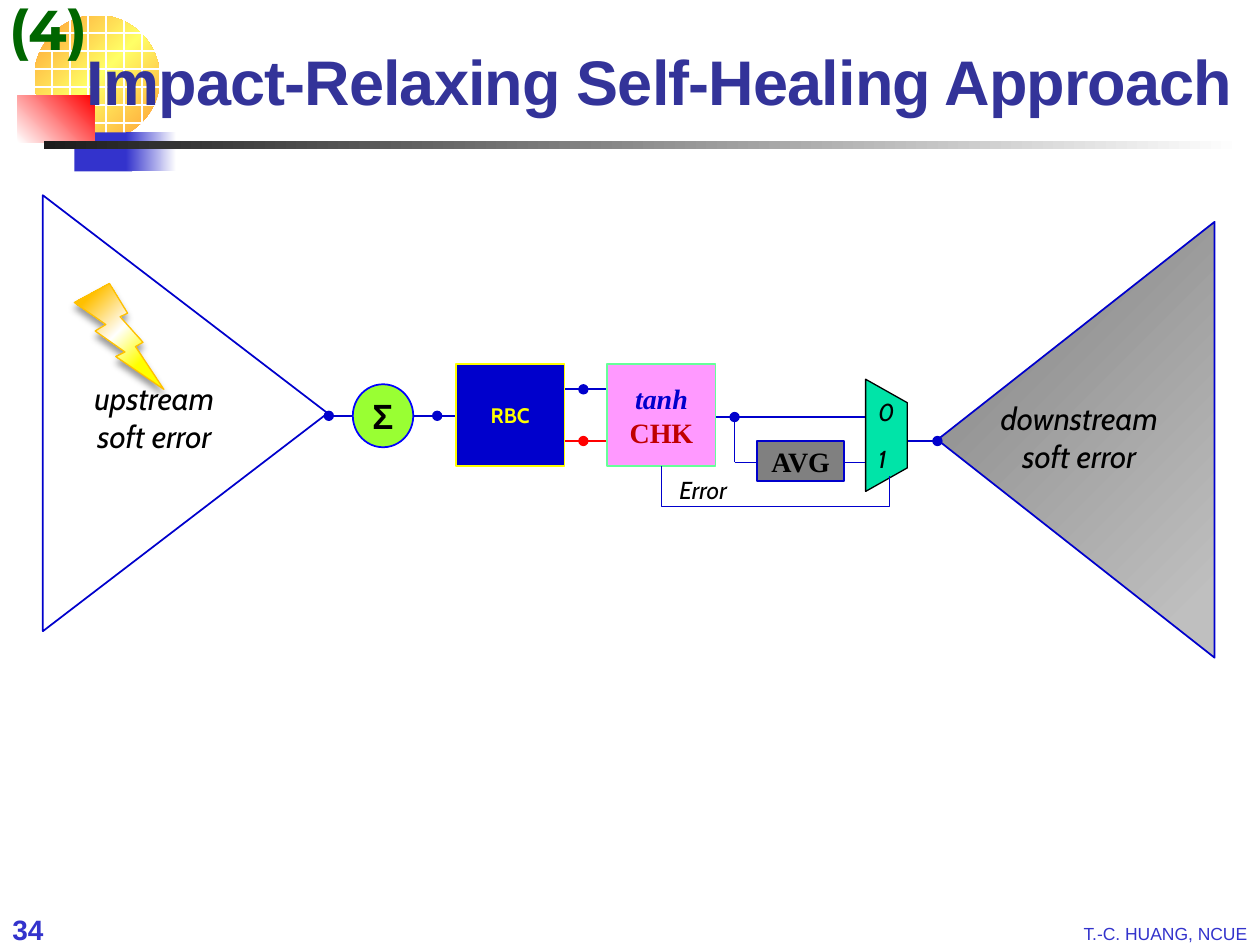
"""Build the slide on the impact-relaxing self-healing approach."""
from dataclasses import dataclass
from itertools import product
from typing import NamedTuple, Optional

from lxml import etree
from pptx import Presentation
from pptx import util as u
from pptx.dml.color import RGBColor
from pptx.enum import shapes, text
from pptx.oxml.ns import qn

KIND = shapes.MSO_SHAPE
CENTER, LEFT = text.PP_ALIGN.CENTER, text.PP_ALIGN.LEFT
COLORS = {
    "white": "FFFFFF", "black": "000000", "blue": "0000CC", "indigo": "3333CC",
    "title": "333399", "green": "006600", "orange": "FF9933", "lemon": "FFFF66",
    "red": "FF0000", "coal": "1C1C1C", "silver": "BFBFBF", "gray": "808080",
    "teal": "00E4A8", "lime": "99FF33", "bright": "0000FF", "yellow": "FFFF00",
    "pink": "FF99FF", "mint": "66FF99", "crimson": "C00000", "amber": "FFC000",
}


class Run(NamedTuple):
    text: str
    size: float
    font: str
    color: str = "black"
    bold: bool = False
    italic: bool = False
    spacing: float = 0


class Gradient(NamedTuple):
    angle: int
    stops: tuple


@dataclass
class Shape:
    kind: int
    at: tuple
    fill: object = None
    line: Optional[str] = None
    width: float = 1
    rotation: int = 0
    adjust: Optional[float] = None


@dataclass
class Wire:
    start: tuple
    end: tuple
    color: str = "blue"
    width: float = 1
    head: bool = False
    tail: bool = False


@dataclass
class Label:
    at: tuple
    lines: list
    align: int = CENTER
    wrap: bool = False
    anchor: int = text.MSO_ANCHOR.TOP


def rgb(name: str) -> RGBColor:
    """Look up a palette colour."""
    return RGBColor.from_string(COLORS[name])


def inches(values: tuple) -> list:
    """Turn plain numbers into lengths."""
    return [u.Inches(v) for v in values]


def write(tf, lines: list, align: int = CENTER, gap: float = 0) -> None:
    """Write one paragraph for each list of runs."""
    for i, runs in enumerate(lines):
        p = tf.add_paragraph() if i else tf.paragraphs[0]
        p.alignment = align
        if i and gap:
            p.space_before = u.Pt(gap)
        for run in runs:
            r = p.add_run()
            r.text = run.text
            r.font.size, r.font.name = u.Pt(run.size), run.font
            r.font.bold, r.font.italic = run.bold, run.italic
            r.font.color.rgb = rgb(run.color)
            if run.spacing:
                r.font._element.set("spc", str(int(run.spacing * 100)))


def paint_gradient(sp, gradient: Gradient) -> None:
    """Fill a shape with a linear gradient that ignores its rotation."""
    sp.fill.background()
    grad = etree.Element(qn("a:gradFill"), rotWithShape="0")
    stops = etree.SubElement(grad, qn("a:gsLst"))
    for pos, name in gradient.stops:
        stop = etree.SubElement(stops, qn("a:gs"), pos=str(pos * 1000))
        etree.SubElement(stop, qn("a:srgbClr"), val=COLORS[name])
    etree.SubElement(grad, qn("a:lin"), ang=str(gradient.angle * 60000), scaled="0")
    spPr = sp._element.spPr
    spPr.replace(spPr.find(qn("a:noFill")), grad)


def draw_shape(s, item: Shape, lines: Optional[list] = None):
    """Draw a preset shape with optional centred text."""
    sp = s.shapes.add_shape(item.kind, *inches(item.at))
    sp.rotation = item.rotation
    sp.shadow.inherit = False
    if item.adjust is not None:
        sp.adjustments[0] = item.adjust
    if isinstance(item.fill, Gradient):
        paint_gradient(sp, item.fill)
    elif item.fill:
        sp.fill.solid()
        sp.fill.fore_color.rgb = rgb(item.fill)
    else:
        sp.fill.background()
    if item.line:
        sp.line.color.rgb, sp.line.width = rgb(item.line), u.Pt(item.width)
    else:
        sp.line.fill.background()
    if lines:
        tf = sp.text_frame
        tf.margin_left = tf.margin_right = tf.margin_top = tf.margin_bottom = 0
        tf.vertical_anchor = text.MSO_ANCHOR.MIDDLE
        write(tf, lines)
    return sp


def draw_wire(s, wire: Wire) -> None:
    """Draw a straight wire with optional junction dots."""
    cxn = s.shapes.add_connector(shapes.MSO_CONNECTOR.STRAIGHT,
                                 *inches(wire.start + wire.end))
    cxn.line.color.rgb, cxn.line.width = rgb(wire.color), u.Pt(wire.width)
    ln = cxn.line._get_or_add_ln()
    for tag, dotted in (("a:headEnd", wire.head), ("a:tailEnd", wire.tail)):
        if dotted:
            etree.SubElement(ln, qn(tag), type="oval")
    etree.SubElement(cxn._element.spPr, qn("a:effectLst"))


def draw_label(s, label: Label):
    """Draw a text box and return its text frame."""
    tf = s.shapes.add_textbox(*inches(label.at)).text_frame
    tf.word_wrap, tf.vertical_anchor = label.wrap, label.anchor
    if not label.wrap:
        tf.auto_size = text.MSO_AUTO_SIZE.SHAPE_TO_FIT_TEXT
    write(tf, label.lines, label.align)
    return tf


def draw_decoration(s) -> None:
    """Draw the footer, the gridded globe and the colour bars."""
    tf = draw_label(s, Label((0, 7.19, 10, 0.37), [[
        Run("34", 16, "Arial", "indigo", True), Run("\t", 14, "Arial", "indigo", True),
        Run("\t", 12, "Arial", "indigo"),
        Run("T.-C. HUANG, NCUE", 10, "Arial", "indigo")]], LEFT, True))
    tabs = etree.SubElement(tf.paragraphs[0]._p.get_or_add_pPr(), qn("a:tabLst"))
    for pos, side in ((4.91, "ctr"), (9.8, "r")):
        etree.SubElement(tabs, qn("a:tab"), pos=str(u.Inches(pos)), algn=side)
    left, top, count = 0.27, 0.12, 7
    cell = 1 / count
    draw_shape(s, Shape(KIND.OVAL, (left, top, 1, 1), Gradient(
        45, ((0, "orange"), (50, "lemon"), (100, "orange")))))
    for col, row in product(range(count), repeat=2):
        at = (left + col * cell, top + row * cell, cell, cell)
        draw_shape(s, Shape(KIND.RECTANGLE, at, line="white", width=0.75))
    for at, fill in (
        ((0.59, 1.05, 0.46, 0.31), "indigo"),
        ((1, 1.05, 0.4, 0.31), Gradient(0, ((0, "indigo"), (100, "white")))),
        ((0.14, 0.76, 0.61, 0.37), Gradient(315, ((0, "white"), (100, "red")))),
        ((0.35, 1.12, 9.51, 0.06), Gradient(0, ((0, "coal"), (100, "white")))),
    ):
        draw_shape(s, Shape(KIND.RECTANGLE, at, fill))


def draw_circuit(s) -> None:
    """Draw the cones, blocks and wires of the circuit."""
    serif, cabin = "Times New Roman", "Cabin"
    draw_shape(s, Shape(KIND.ISOSCELES_TRIANGLE, (6.81, 2.39, 3.46, 2.2), Gradient(
        225, ((9, "silver"), (100, "gray"))), "blue", rotation=270))
    draw_shape(s, Shape(KIND.ISOSCELES_TRIANGLE, (-0.26, 2.15, 3.46, 2.26),
                        line="blue", rotation=90))
    for wire in (
        Wire((5.83, 3.67), (6.87, 3.67)),
        Wire((5.83, 3.67), (5.83, 3.31)),
        Wire((5.24, 3.31), (5.83, 3.31), tail=True),
        Wire((5.83, 3.31), (6.87, 3.31)),
        Wire((7.2, 3.5), (7.44, 3.5), tail=True),
        Wire((2.61, 3.3), (3.47, 3.3), head=True, tail=True),
        Wire((3.47, 3.3), (4.05, 3.3)),
        Wire((4.05, 3.5), (4.63, 3.5), "red", 1.5, tail=True),
        Wire((4.63, 3.5), (5.21, 3.5), "red", 1.5),
        Wire((4.05, 3.09), (4.63, 3.09), tail=True),
        Wire((4.63, 3.09), (5.21, 3.09)),
    ):
        draw_wire(s, wire)
    for block, lines in (
        (Shape(KIND.RECTANGLE, (6.01, 3.5, 0.69, 0.32), "gray", "blue"),
         [[Run("AVG", 16, serif, bold=True)]]),
        (Shape(KIND.OVAL, (2.8, 3.05, 0.48, 0.5), "lime", "bright"),
         [[Run("Σ", 20, "Arial", bold=True)]]),
        (Shape(KIND.FLOWCHART_PROCESS, (3.62, 2.89, 0.86, 0.81), "blue", "yellow"),
         [[Run("RBC", 12, cabin, "yellow", True)]]),
        (Shape(KIND.FLOWCHART_PROCESS, (4.82, 2.89, 0.86, 0.81), "pink", "mint"),
         [[Run("tanh", 16, serif, "blue", True, True)],
          [Run("CHK", 16, serif, "crimson", True)]]),
    ):
        draw_shape(s, block, lines)
    mux = draw_shape(s, Shape(KIND.TRAPEZOID, (6.59, 3.29, 0.89, 0.33), "teal",
                              "black", 0.75, 90, 0.564))
    tf = mux.text_frame
    tf.margin_left = tf.margin_right = tf.margin_top = 0
    tf.margin_bottom, tf.word_wrap = u.Inches(0.05), False
    tf._txBody.bodyPr.set("vert", "vert270")
    write(tf, [[Run(d, 14, cabin, italic=True)] for d in "01"], LEFT, 10)
    points = [tuple(inches(xy)) for xy in
              ((5.25, 3.7), (5.25, 4.02), (7.06, 4.02), (7.06, 3.78))]
    builder = s.shapes.build_freeform(*points[0])
    builder.add_line_segments(points[1:], close=False)
    sp = builder.convert_to_shape()
    sp.shadow.inherit = False
    sp.fill.background()
    sp.line.color.rgb, sp.line.width = rgb("blue"), u.Pt(1)
    for at, size, words in (
        ((0.65, 2.96, 1.15, 0.71), 18, ("upstream", "soft error")),
        ((7.84, 3.12, 1.45, 0.71), 18, ("downstream", "soft error")),
        ((5.29, 3.72, 0.58, 0.34), 14, ("Error",)),
    ):
        draw_label(s, Label(at, [[Run(w, size, cabin, italic=True)] for w in words]))
    bolt = draw_shape(s, Shape(KIND.LIGHTNING_BOLT, (0.59, 2.25, 0.71, 0.84), Gradient(
        225, ((26, "yellow"), (53, "white"), (86, "amber"))), "amber", 0.75))
    shadow = etree.SubElement(
        bolt._element.spPr.find(qn("a:effectLst")), qn("a:outerShdw"),
        blurRad=str(u.Pt(4)), dist=str(u.Pt(3)), dir="5400000", rotWithShape="0")
    tint = etree.SubElement(shadow, qn("a:srgbClr"), val=COLORS["black"])
    etree.SubElement(tint, qn("a:alpha"), val="40000")


def main() -> None:
    """Build and save the slide."""
    prs = Presentation()
    prs.slide_width, prs.slide_height = inches((10, 7.5))
    s = prs.slides.add_slide(prs.slide_layouts[6])
    draw_decoration(s)
    draw_label(s, Label((0.59, 0.23, 9.5, 0.76), [[
        Run("Impact-Relaxing Self-Healing Approach", 36, "Arial", "title", True,
            spacing=-0.5)]], LEFT, True, text.MSO_ANCHOR.BOTTOM))
    draw_label(s, Label((-0.04, -0.09, 0.85, 0.64),
                        [[Run("(4)", 32, "Montserrat", "green", True)]]))
    draw_circuit(s)
    prs.save("out.pptx")


if __name__ == "__main__":
    main()
